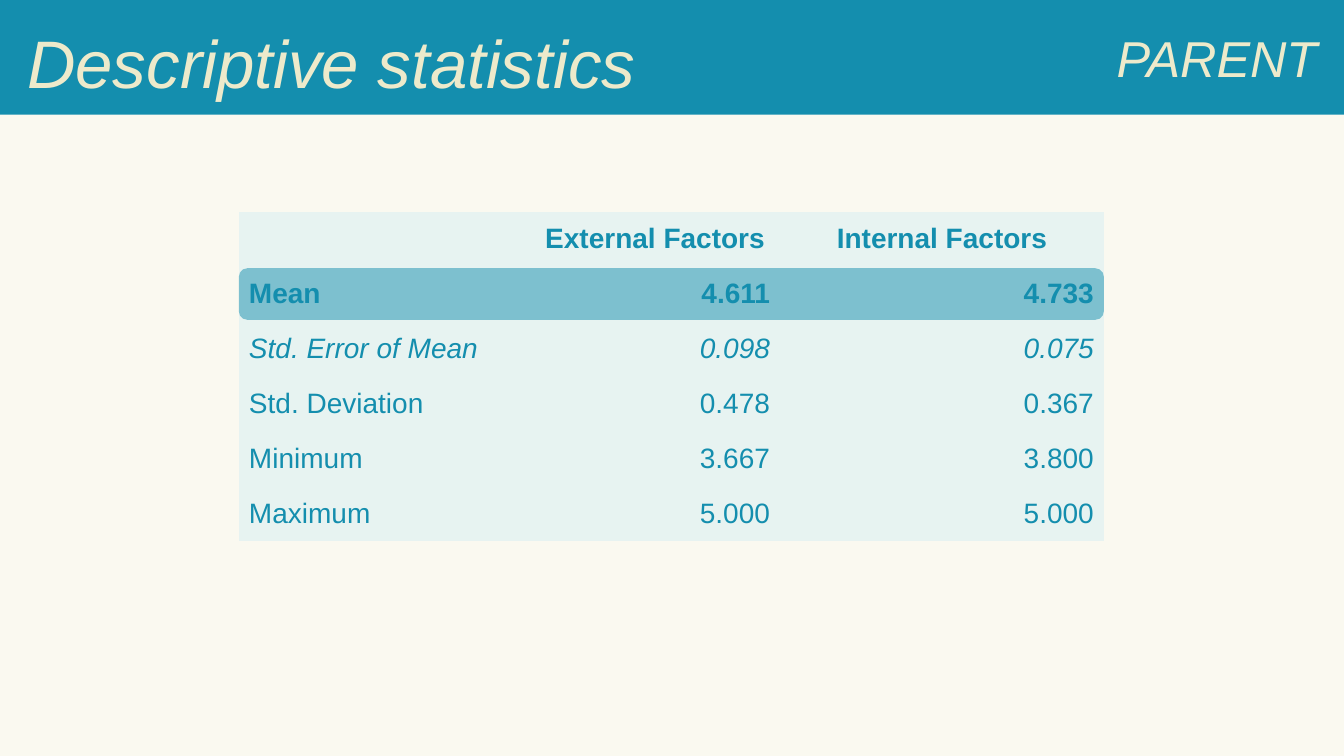
from typing import NamedTuple

from lxml.etree import SubElement
from pptx import Presentation
from pptx.dml.color import RGBColor
from pptx.enum.shapes import MSO_SHAPE
from pptx.enum.text import MSO_ANCHOR, MSO_AUTO_SIZE, PP_ALIGN
from pptx.oxml.ns import qn
from pptx.shapes.autoshape import Shape
from pptx.slide import Slide
from pptx.util import Cm, Pt

TEAL = RGBColor(0x14, 0x8E, 0xAE)
CREAM = RGBColor(0xED, 0xEA, 0xCB)
PAPER = RGBColor(0xFA, 0xF9, 0xF0)
PALE = RGBColor(0xE7, 0xF3, 0xF1)
FONT = "Arial"
NO_STYLE_NO_GRID = "{2D5ABB26-0587-4C30-8999-92F81FD0307C}"

SLIDE_W, SLIDE_H = 33.87, 19.05
TABLE_X, TABLE_Y, ROW_H = 6.02, 5.33, 1.385
COL_WIDTHS = (7.34, 6.3, 8.16)


class Box(NamedTuple):
    x: float
    y: float
    w: float
    h: float


class StatRow(NamedTuple):
    cells: tuple[str, str, str]
    bold: bool = False
    italic: bool = False


ROWS = (
    StatRow(("", "External Factors", "Internal Factors"), bold=True),
    StatRow(("Mean", "4.611", "4.733"), bold=True),
    StatRow(("Std. Error of Mean", "0.098", "0.075"), italic=True),
    StatRow(("Std. Deviation", "0.478", "0.367")),
    StatRow(("Minimum", "3.667", "3.800")),
    StatRow(("Maximum", "5.000", "5.000")),
)


def add_block(s: Slide, kind: MSO_SHAPE, box: Box) -> Shape:
    sp = s.shapes.add_shape(kind, *map(Cm, box))
    sp.shadow.inherit = False
    sp.fill.solid()
    sp.fill.fore_color.rgb = TEAL
    sp.line.fill.background()
    return sp


def set_heading(sp: Shape, box: Box, text: str, size: int, align: PP_ALIGN) -> None:
    sp.left, sp.top, sp.width, sp.height = map(Cm, box)
    tf = sp.text_frame
    tf.text = text
    tf.word_wrap = True
    tf.auto_size = MSO_AUTO_SIZE.SHAPE_TO_FIT_TEXT
    tf.vertical_anchor = MSO_ANCHOR.TOP
    p = tf.paragraphs[0]
    p.alignment = align
    p.font.name, p.font.size, p.font.italic = FONT, Pt(size), True
    p.font.color.rgb = CREAM


def add_stats_table(s: Slide) -> None:
    frame = s.shapes.add_table(len(ROWS), len(COL_WIDTHS), Cm(TABLE_X), Cm(TABLE_Y),
                               Cm(sum(COL_WIDTHS)), Cm(ROW_H * len(ROWS)))
    frame.element.find(".//" + qn("a:tableStyleId")).text = NO_STYLE_NO_GRID
    table = frame.table
    table.first_row = table.horz_banding = False
    for column, width in zip(table.columns, COL_WIDTHS):
        column.width = Cm(width)
    for i, row in enumerate(ROWS):
        table.rows[i].height = Cm(ROW_H)
        for j, text in enumerate(row.cells):
            cell = table.cell(i, j)
            cell.fill.solid()
            cell.fill.fore_color.rgb = PALE
            cell.vertical_anchor = MSO_ANCHOR.MIDDLE
            cell.text = text
            p = cell.text_frame.paragraphs[0]
            if i == 0:
                p.alignment = PP_ALIGN.CENTER
            else:
                p.alignment = PP_ALIGN.RIGHT if j else PP_ALIGN.LEFT
            p.font.name, p.font.size = FONT, Pt(20)
            p.font.bold, p.font.italic = row.bold, row.italic
            p.font.color.rgb = TEAL


def main() -> None:
    prs = Presentation()
    prs.slide_width, prs.slide_height = Cm(SLIDE_W), Cm(SLIDE_H)
    s = prs.slides.add_slide(prs.slide_layouts[5])
    s.background.fill.solid()
    s.background.fill.fore_color.rgb = PAPER

    # Header band with section label and title
    add_block(s, MSO_SHAPE.RECTANGLE, Box(0, -0.05, SLIDE_W, 2.94))
    label = s.shapes.add_textbox(0, 0, 0, 0)
    set_heading(label, Box(0, 0.56, 33.45, 1.8), "PARENT", 36, PP_ALIGN.RIGHT)
    title = s.shapes.title
    set_heading(title, Box(0.43, 0.41, 33.45, 2.31), "Descriptive statistics", 48, PP_ALIGN.LEFT)
    s.shapes.element.append(title.element)  # bring the title in front of the band

    # Statistics table
    add_stats_table(s)

    # Half-transparent highlight over the mean
    highlight = add_block(s, MSO_SHAPE.ROUNDED_RECTANGLE,
                          Box(TABLE_X, 6.76, sum(COL_WIDTHS), 1.3))
    color = highlight.element.spPr.find(qn("a:solidFill"))[0]
    SubElement(color, qn("a:alpha"), val="50000")

    prs.save("out.pptx")


if __name__ == "__main__":
    main()
